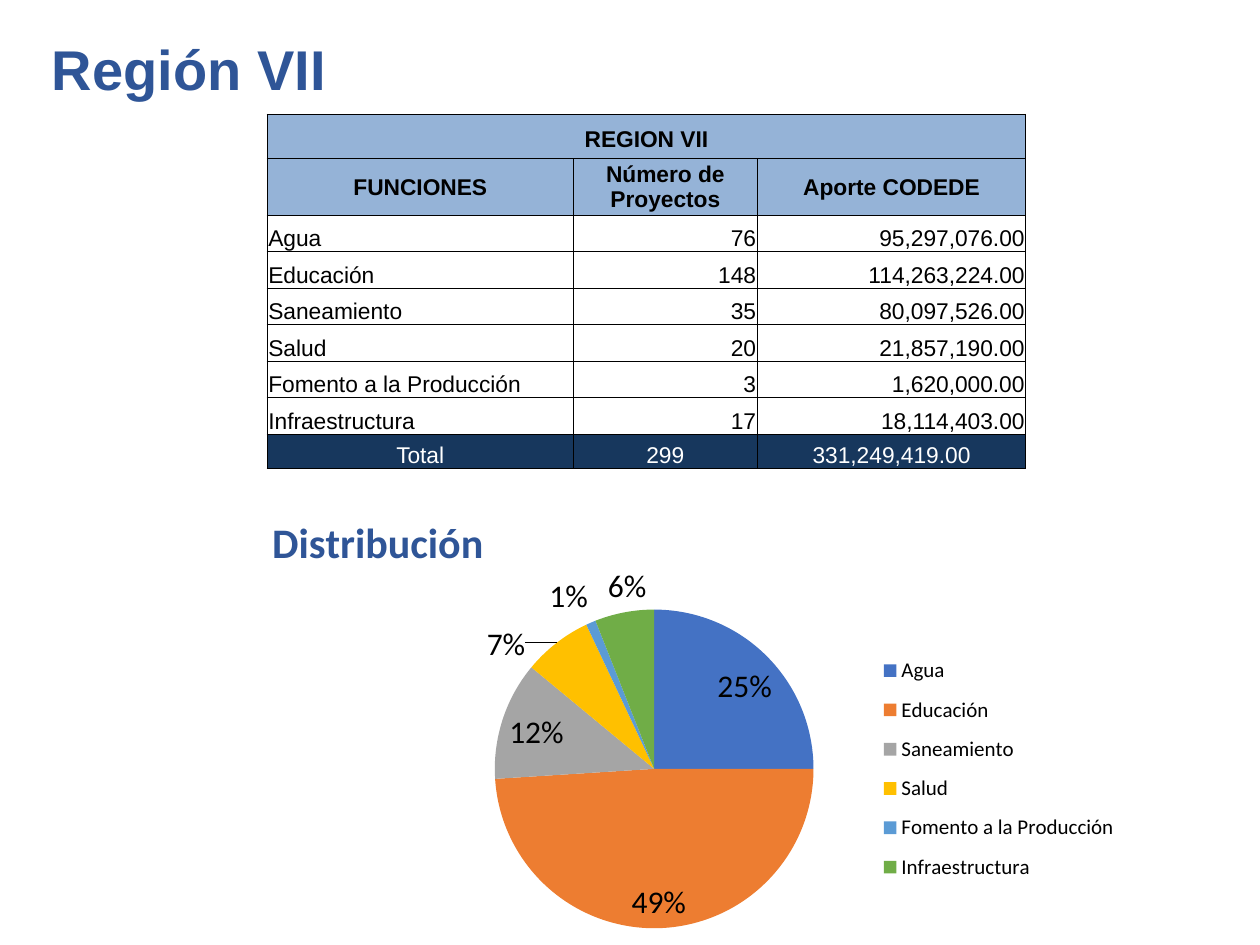
import pptx
import pptx.chart.data
import pptx.dml.color
import pptx.enum.chart
import pptx.enum.text
import pptx.oxml
import pptx.oxml.ns
import pptx.util

COLORS = {
    "heading": "2F5597", "text": "000000", "white": "FFFFFF",
    "header": "95B3D7", "total": "17375D", "border": "000000",
}
SLICES = ["4472C4", "ED7D31", "A5A5A5", "FFC000", "5B9BD5", "70AD47"]
ALIGN = pptx.enum.text.PP_ALIGN
ANCHOR = pptx.enum.text.MSO_ANCHOR
FUNCTIONS = [
    ("Agua", "76", "95,297,076.00"),
    ("Educación", "148", "114,263,224.00"),
    ("Saneamiento", "35", "80,097,526.00"),
    ("Salud", "20", "21,857,190.00"),
    ("Fomento a la Producción", "3", "1,620,000.00"),
    ("Infraestructura", "17", "18,114,403.00"),
]
SHARES = [25, 49, 12, 7, 1, 6]


def rgb(value):
    return pptx.dml.color.RGBColor.from_string(value)


def set_font(font, color="text", **values):
    for name, value in values.items():
        setattr(font, name, pptx.util.Pt(value) if name == "size" else value)
    font.color.rgb = rgb(COLORS[color])


class Deck:
    """Holds the presentation, its style and the current slide."""

    def __init__(self, width, height):
        self.prs = pptx.Presentation()
        self.prs.slide_width = pptx.util.Inches(width)
        self.prs.slide_height = pptx.util.Inches(height)
        self.s = self.prs.slides.add_slide(self.prs.slide_layouts[5])

    def box(self, x, y, w, h):
        """Turn shares of the slide's size into lengths."""
        W, H = self.prs.slide_width, self.prs.slide_height
        return int(x * W), int(y * H), int(w * W), int(h * H)

    def title(self, text, box):
        sp = self.s.shapes.title
        sp.left, sp.top, sp.width, sp.height = self.box(*box)
        tf = sp.text_frame
        tf.text = text
        tf.vertical_anchor = ANCHOR.TOP
        tf.auto_size = pptx.enum.text.MSO_AUTO_SIZE.NONE
        p = tf.paragraphs[0]
        p.alignment = ALIGN.CENTER
        set_font(p.runs[0].font, "heading", size=32, name="Arial", bold=True)

    def cell(self, cell, text, align, anchor, fill=None, color="text", bold=False):
        cell.text = text
        cell.vertical_anchor = anchor
        for side, inset in {"left": 0.01, "right": 0.01, "top": 0.01, "bottom": 0}.items():
            setattr(cell, f"margin_{side}", pptx.util.Inches(inset))
        p = cell.text_frame.paragraphs[0]
        p.alignment = align
        set_font(p.font, color, size=13, name="Arial", bold=bold)
        for r in p.runs:
            set_font(r.font, color, size=13, name="Arial", bold=bold)
        tcPr = cell._tc.get_or_add_tcPr()
        for side in ("lnL", "lnR", "lnT", "lnB"):
            tcPr.append(pptx.oxml.parse_xml(
                f'<a:{side} {pptx.oxml.ns.nsdecls("a")} w="6350"><a:solidFill>'
                f'<a:srgbClr val="{COLORS["border"]}"/></a:solidFill></a:{side}>'))
        if fill:
            cell.fill.solid()
            cell.fill.fore_color.rgb = rgb(COLORS[fill])
        else:
            cell.fill.background()

    def table(self, rows, box, columns, heights):
        """Draw two header rows, body rows and a total row."""
        tbl = self.s.shapes.add_table(len(rows), len(columns), *self.box(*box)).table
        tbl.first_row = tbl.horz_banding = False
        for column, width in zip(tbl.columns, columns):
            column.width = pptx.util.Inches(width)
        for row, height in zip(tbl.rows, heights):
            row.height = pptx.util.Inches(height)
        header = {"fill": "header", "bold": True}
        total = {"fill": "total", "color": "white"}
        for i, row in enumerate(rows):
            anchor = ANCHOR.MIDDLE if i == 1 else ANCHOR.BOTTOM
            style = header if i < 2 else total if i == len(rows) - 1 else {}
            for j, text in enumerate(row):
                align = ALIGN.CENTER if style else ALIGN.RIGHT if j else ALIGN.LEFT
                self.cell(tbl.cell(i, j), text, align, anchor, **style)
        banner = tbl.cell(0, 0)
        banner.merge(tbl.cell(0, len(columns) - 1))
        banner.margin_top = banner.margin_bottom = pptx.util.Inches(0.05)

    def pie(self, name, categories, values, box):
        data = pptx.chart.data.CategoryChartData()
        data.categories = categories
        data.add_series(name, values)
        chart = self.s.shapes.add_chart(
            pptx.enum.chart.XL_CHART_TYPE.PIE, *self.box(*box), data).chart
        set_font(chart.font, size=18, name="Calibri")

        chart.has_title = True
        tf = chart.chart_title.text_frame
        tf.text = name
        set_font(tf.paragraphs[0].runs[0].font, "heading",
                 size=24, name="Calibri", bold=True)
        chart.chart_title.include_in_layout = False

        chart.has_legend = True
        chart.legend.position = pptx.enum.chart.XL_LEGEND_POSITION.RIGHT
        chart.legend.include_in_layout = False
        set_font(chart.legend.font, size=12, name="Calibri")

        plot = chart.plots[0]
        plot.vary_by_categories = True
        for i, color in enumerate(SLICES):
            fill = plot.series[0].points[i].format.fill
            fill.solid()
            fill.fore_color.rgb = rgb(color)
        plot.has_data_labels = True
        labels = plot.data_labels
        for name, value in {
            "show_percentage": True, "show_value": False,
            "number_format": "0%", "number_format_is_linked": False,
            "position": pptx.enum.chart.XL_LABEL_POSITION.BEST_FIT,
        }.items():
            setattr(labels, name, value)
        set_font(labels.font, size=18, name="Calibri")

        self.place(chart, "c:title", x=0.01, y=0.11)
        self.place(chart, "c:plotArea", x=0.24, y=0.32, w=0.32, h=0.65)
        self.place(chart, "c:legend", x=0.62, y=0.39, w=0.25, h=0.51)

    def place(self, chart, tag, **shares):
        """Fix a chart part at shares of the chart's size."""
        part = chart._chartSpace.chart.find(pptx.oxml.ns.qn(tag))
        for old in part.findall(pptx.oxml.ns.qn("c:layout")):
            part.remove(old)
        target = '<c:layoutTarget val="inner"/>' if tag == "c:plotArea" else ""
        modes = "".join(f'<c:{k}Mode val="edge"/>' for k in "xy")
        sizes = "".join(f'<c:{k} val="{v}"/>' for k, v in shares.items())
        layout = pptx.oxml.parse_xml(
            f'<c:layout {pptx.oxml.ns.nsdecls("c")}><c:manualLayout>'
            f"{target}{modes}{sizes}</c:manualLayout></c:layout>")
        part.insert(0 if target else 1, layout)


def main():
    deck = Deck(10, 7.5)
    deck.title("Región VII", (-0.03, 0.03, 0.36, 0.08))
    rows = [("REGION VII", "", ""),
            ("FUNCIONES", "Número de Proyectos", "Aporte CODEDE"),
            *FUNCTIONS, ("Total", "299", "331,249,419.00")]
    deck.table(rows, (0.212, 0.121, 0.602, 0.372), (2.43, 1.46, 2.13),
               [0.35, 0.45] + [0.29] * len(FUNCTIONS) + [0.27])
    deck.pie("Distribución", [row[0] for row in FUNCTIONS], SHARES,
             (0.202, 0.479, 0.793, 0.519))
    deck.prs.save("out.pptx")


if __name__ == "__main__":
    main()
